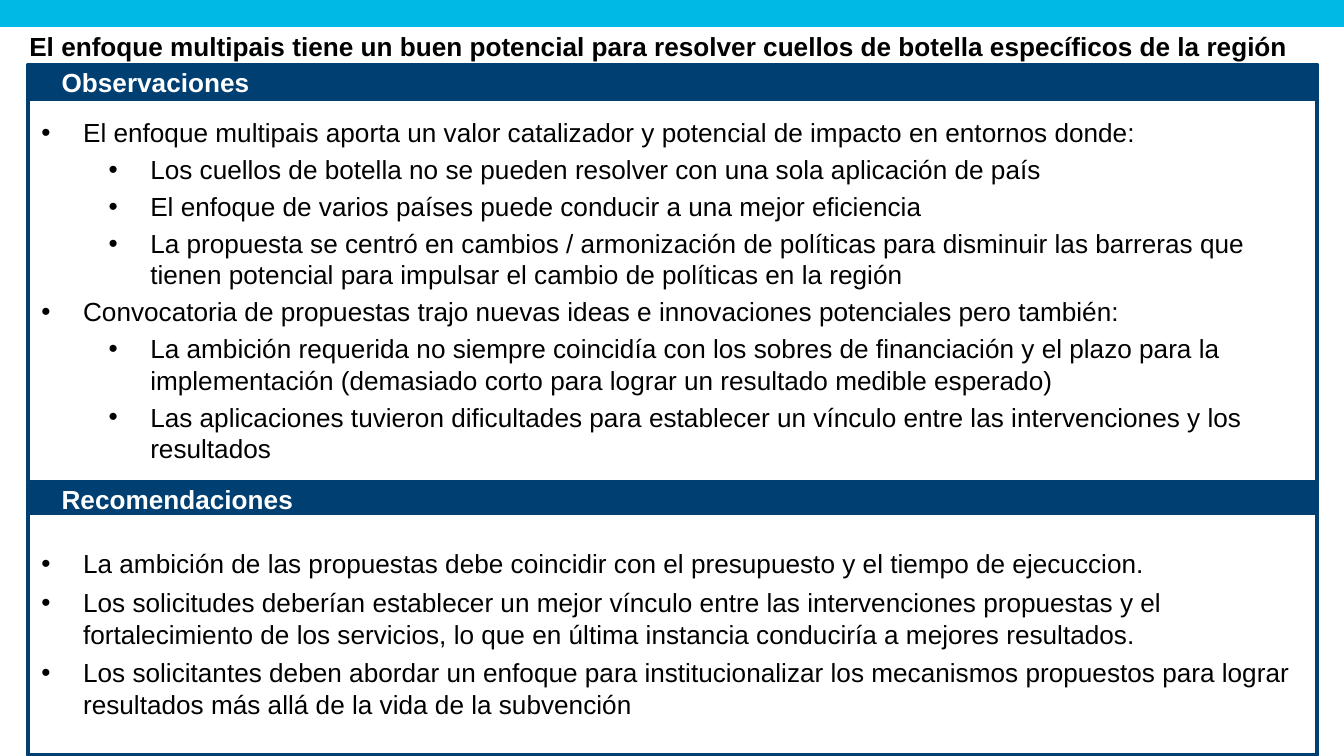
from dataclasses import dataclass

from lxml.etree import SubElement
from pptx import Presentation
from pptx.dml.color import RGBColor
from pptx.enum.shapes import MSO_SHAPE as Shape
from pptx.enum.text import MSO_ANCHOR as Anchor, PP_ALIGN as Align
from pptx.oxml.ns import qn
from pptx.util import Inches, Pt


@dataclass(frozen=True)
class Theme:
    font: str = "Arial"
    size: int = 14
    cyan: str = "00B9E4"
    navy: str = "003F72"
    white: str = "FFFFFF"
    black: str = "000000"


THEME = Theme()
LEFT, WIDTH = 0.21, 9.59
BULLET_INDENT, LEVEL_STEP = 0.31, 0.5

TITLE = "El enfoque multipais tiene un buen potencial para resolver cuellos de botella específicos de la región"
OBSERVATIONS = [
    (0, "El enfoque multipais aporta un valor catalizador y potencial de impacto en entornos donde:"),
    (1, "Los cuellos de botella no se pueden resolver con una sola aplicación de país"),
    (1, "El enfoque de varios países puede conducir a una mejor eficiencia"),
    (1, "La propuesta se centró en cambios / armonización de políticas para disminuir las barreras que "
        "tienen potencial para impulsar el cambio de políticas en la región"),
    (0, "Convocatoria de propuestas trajo nuevas ideas e innovaciones potenciales pero también:"),
    (1, "La ambición requerida no siempre coincidía con los sobres de financiación y el plazo para la "
        "implementación (demasiado corto para lograr un resultado medible esperado)"),
    (1, "Las aplicaciones tuvieron dificultades para establecer un vínculo entre las intervenciones y los resultados"),
]
RECOMMENDATIONS = [
    (0, "La ambición de las propuestas debe coincidir con el presupuesto y el tiempo de ejecuccion."),
    (0, "Los solicitudes deberían establecer un mejor vínculo entre las intervenciones propuestas y el "
        "fortalecimiento de los servicios, lo que en última instancia conduciría a mejores resultados."),
    (0, "Los solicitantes deben abordar un enfoque para institucionalizar los mecanismos propuestos para lograr "
        "resultados más allá de la vida de la subvención"),
]


def color(value):
    return RGBColor.from_string(value)


def set_font(paragraph, text_color, bold=False):
    paragraph.font.name = THEME.font
    paragraph.font.size = Pt(THEME.size)
    paragraph.font.bold = bold
    paragraph.font.color.rgb = color(text_color)


def set_indent(paragraph, margin, first_line=0):
    properties = paragraph._p.get_or_add_pPr()
    properties.set("marL", str(Inches(margin)))
    properties.set("indent", str(Inches(first_line)))
    return properties


def add_box(slide, left, top, width, height, fill, line_width=None):
    shape = slide.shapes.add_shape(
        Shape.RECTANGLE, Inches(left), Inches(top), Inches(width), Inches(height))
    shape.shadow.inherit = False
    shape.fill.solid()
    shape.fill.fore_color.rgb = color(fill)
    if line_width is None:
        shape.line.fill.background()
    else:
        shape.line.color.rgb = color(THEME.navy)
        shape.line.width = Pt(line_width)
    shape.text_frame.word_wrap = True
    shape.text_frame.vertical_anchor = Anchor.MIDDLE
    return shape


def add_bullet_panel(slide, top, height, items, space_after):
    frame = add_box(slide, LEFT, top, WIDTH, height, THEME.white, 2.25).text_frame
    for index, (level, text) in enumerate(items):
        paragraph = frame.add_paragraph() if index else frame.paragraphs[0]
        paragraph.text = text
        paragraph.level = level
        paragraph.alignment = Align.LEFT
        paragraph.space_after = Pt(space_after)
        properties = set_indent(paragraph, BULLET_INDENT + level * LEVEL_STEP, -BULLET_INDENT)
        SubElement(properties, qn("a:buFont"), typeface=THEME.font)
        SubElement(properties, qn("a:buChar"), char="•")
        set_font(paragraph, THEME.black)


def add_header(slide, top, height, text):
    shape = add_box(slide, LEFT, top, WIDTH, height, THEME.navy, 2)
    paragraph = shape.text_frame.paragraphs[0]
    paragraph.text = text
    paragraph.alignment = Align.LEFT
    set_indent(paragraph, 0.15)
    set_font(paragraph, THEME.white, bold=True)


def add_title(slide, text):
    box = slide.shapes.add_textbox(Inches(0.12), Inches(0.18), Inches(9.73), Inches(0.39))
    box.text_frame.word_wrap = True
    paragraph = box.text_frame.paragraphs[0]
    paragraph.text = text
    set_font(paragraph, THEME.black, bold=True)


def main():
    presentation = Presentation()
    presentation.slide_width = Inches(10)
    presentation.slide_height = Inches(10) * 9 // 16
    slide = presentation.slides.add_slide(presentation.slide_layouts[6])
    add_box(slide, 0, 0, 10.02, 0.2, THEME.cyan)
    add_bullet_panel(slide, 0.73, 2.86, OBSERVATIONS, 3)
    add_bullet_panel(slide, 3.81, 1.81, RECOMMENDATIONS, 4)
    add_header(slide, 3.6, 0.22, "Recomendaciones")
    add_header(slide, 0.48, 0.26, "Observaciones")
    add_title(slide, TITLE)
    presentation.save("out.pptx")


if __name__ == "__main__":
    main()
